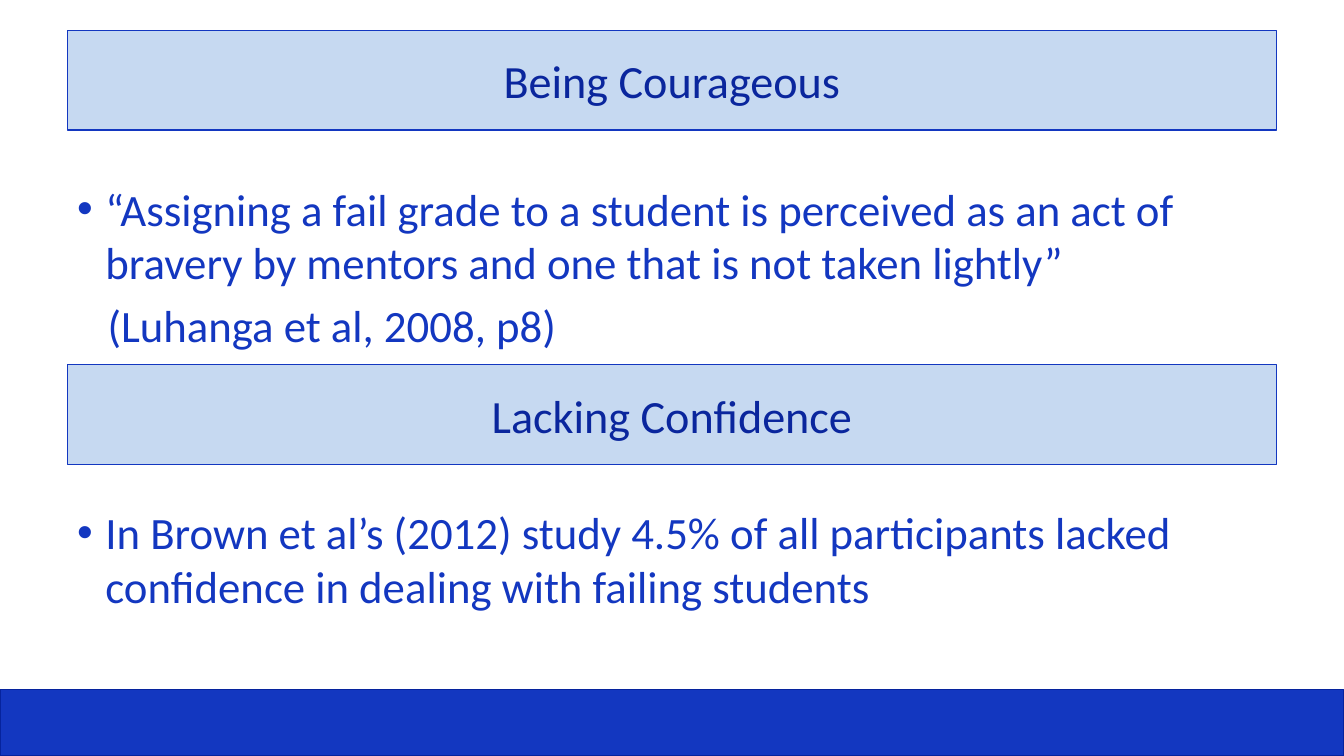
from pptx import Presentation
from pptx import util as u
from pptx.dml.color import RGBColor
from pptx.enum import shapes, text
from pptx.oxml.ns import qn
from lxml import etree

BLUE = RGBColor(0x13, 0x37, 0xC0)
NAVY = RGBColor(0x06, 0x23, 0x9D)
HEADING = RGBColor(0x0A, 0x26, 0x9D)
PALE = RGBColor(0xC6, 0xD9, 0xF1)

WIDTH, HEIGHT = 960, 540
LEFT, BOX_W = 48, 864
BAND_H, BODY_H, FOOTER_H = 71.3, 136.8, 47.5
INDENT = 20.25


class Deck:
    """Holds the text style and the current slide."""

    heading = {"name": "Calibri", "size": u.Pt(33), "bold": False}
    body = {"name": "Calibri", "size": u.Pt(32)}

    def __init__(self, prs):
        self.s = prs.slides.add_slide(prs.slide_layouts[5])

    def set_font(self, font, style, color):
        for key, value in style.items():
            setattr(font, key, value)
        font.color.rgb = color

    def place(self, sp, left, top, width, height):
        box = {"left": left, "top": top, "width": width, "height": height}
        for key, value in box.items():
            setattr(sp, key, u.Pt(value))

    def paint(self, sp, fill, line):
        sp.fill.solid()
        sp.fill.fore_color.rgb = fill
        sp.line.color.rgb = line
        sp.line.width = u.Pt(0.75)

    def rect(self, left, top, width, height, fill, line):
        sp = self.s.shapes.add_shape(
            shapes.MSO_SHAPE.RECTANGLE, *map(u.Pt, (left, top, width, height)))
        sp.shadow.inherit = False
        self.paint(sp, fill, line)
        return sp

    def label(self, sp, words):
        tf = sp.text_frame
        frame = {"word_wrap": True, "auto_size": text.MSO_AUTO_SIZE.NONE,
                 "vertical_anchor": text.MSO_ANCHOR.MIDDLE}
        for key, value in frame.items():
            setattr(tf, key, value)
        p = tf.paragraphs[0]
        p.alignment = text.PP_ALIGN.CENTER
        r = p.add_run()
        r.text = words
        self.set_font(r.font, self.heading, HEADING)

    def title(self, top, words):
        sp = self.s.shapes.title
        self.place(sp, LEFT, top, BOX_W, BAND_H)
        self.paint(sp, PALE, BLUE)
        self.label(sp, words)

    def band(self, top, words):
        self.label(self.rect(LEFT, top, BOX_W, BAND_H, PALE, BLUE), words)

    def points(self, top, items):
        """Each item is (words, has_bullet)."""
        sp = self.s.shapes.add_textbox(*map(u.Pt, (LEFT, top, BOX_W, BODY_H)))
        tf = sp.text_frame
        tf.word_wrap = True
        for i, (words, has_bullet) in enumerate(items):
            p = tf.add_paragraph() if i else tf.paragraphs[0]
            if i:
                p.space_before = u.Pt(6.4)
            pPr = p._p.get_or_add_pPr()
            if has_bullet:
                pPr.set("marL", str(u.Pt(INDENT)))
                pPr.set("indent", str(u.Pt(-INDENT)))
                etree.SubElement(pPr, qn("a:buFont"), typeface="Arial")
                etree.SubElement(pPr, qn("a:buChar"), char="•")
            else:
                pPr.set("marL", str(u.Pt(INDENT + 1.5)))
            r = p.add_run()
            r.text = words
            self.set_font(r.font, self.body, BLUE)


def main():
    prs = Presentation()
    prs.slide_width, prs.slide_height = u.Pt(WIDTH), u.Pt(HEIGHT)
    deck = Deck(prs)

    # Footer bar
    deck.rect(0, HEIGHT - FOOTER_H, WIDTH, FOOTER_H, BLUE, NAVY)

    # Courage
    deck.title(21.6, "Being Courageous")
    deck.points(126, [
        ("“Assigning a fail grade to a student is perceived as an act of "
         "bravery by mentors and one that is not taken lightly”", True),
        ("(Luhanga et al, 2008, p8)", False),
    ])

    # Confidence
    deck.band(260.6, "Lacking Confidence")
    deck.points(357, [
        ("In Brown et al’s (2012) study 4.5% of all participants lacked "
         "confidence in dealing with failing students", True),
    ])

    prs.save("out.pptx")


if __name__ == "__main__":
    main()
